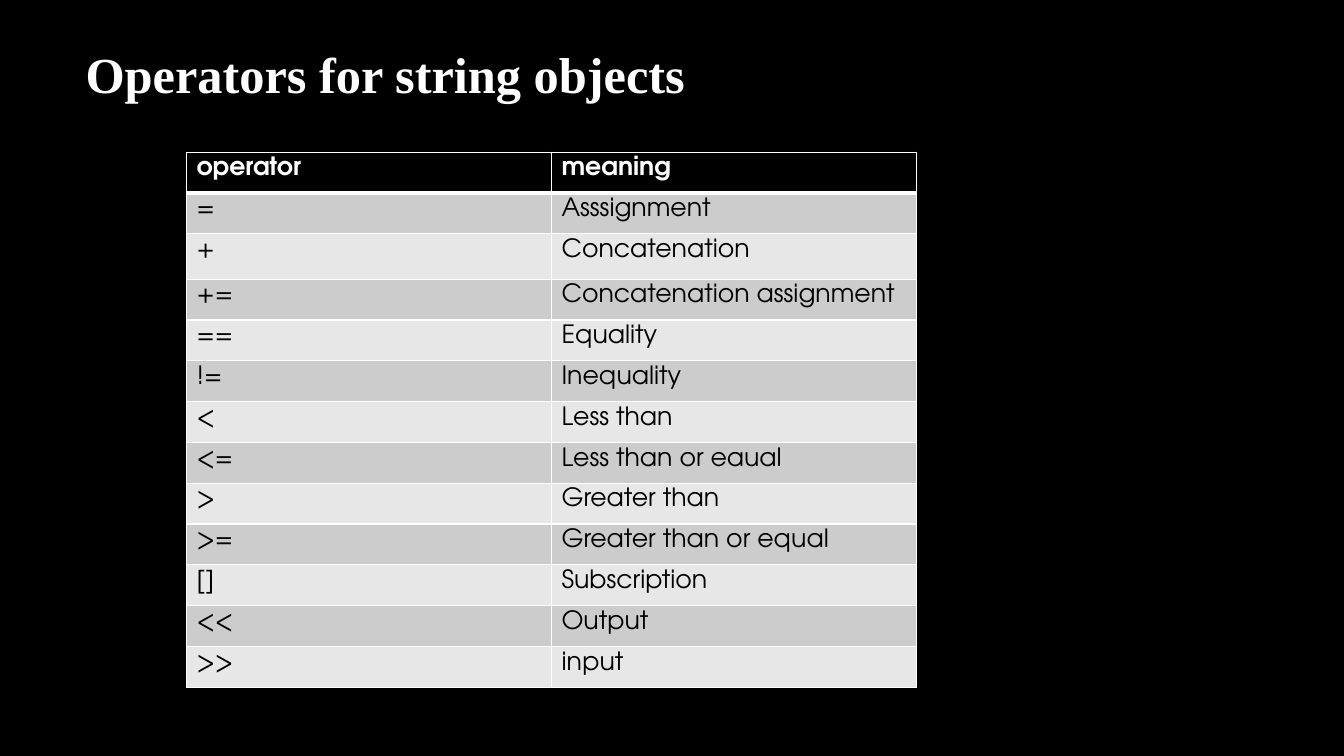
from lxml.etree import SubElement
from pptx import Presentation
from pptx.dml.color import RGBColor
from pptx.enum.text import MSO_ANCHOR
from pptx.oxml.ns import qn
from pptx.util import Inches, Pt

ROWS = [
    ("operator", "meaning"),
    ("=", "Asssignment"),
    ("+", "Concatenation"),
    ("+=", "Concatenation assignment"),
    ("==", "Equality"),
    ("!=", "Inequality"),
    ("<", "Less than"),
    ("<=", "Less than or eaual"),
    (">", "Greater than"),
    (">=", "Greater than or equal"),
    ("[]", "Subscription"),
    ("<<", "Output"),
    (">>", "input"),
]


def color(code):
    return RGBColor.from_string(code)


def style(para, face, size, code, bold):
    font = para.font
    font.name, font.size, font.bold = face, Pt(size), bold
    font.color.rgb = color(code)


def edge(cell, side, width):
    line = SubElement(cell._tc.get_or_add_tcPr(), qn("a:ln" + side), w=str(Pt(width)))
    fill = SubElement(line, qn("a:solidFill"))
    SubElement(fill, qn("a:srgbClr"), val="FFFFFF")


def title(slide, box, text):
    frame = slide.shapes.add_textbox(*map(Inches, box)).text_frame
    frame.word_wrap = True
    frame.vertical_anchor = MSO_ANCHOR.MIDDLE
    para = frame.paragraphs[0]
    para.text = text
    para.line_spacing = 0.9
    style(para, "Times New Roman", 36, "FFFFFF", True)


def grid(slide, box, rows):
    count = len(rows[0])
    table = slide.shapes.add_table(len(rows), count, *map(Inches, box)).table
    for col in table.columns:
        col.width = Inches(box[2] / count)
    for r, words in enumerate(rows):
        head = r == 0
        table.rows[r].height = Inches(0.45 if r == 2 else 0.405)
        for c, word in enumerate(words):
            cell = table.cell(r, c)
            for side in "LRTB":
                thick = (head and side == "B") or (r == 1 and side == "T")
                edge(cell, side, 3 if thick else 1)
            cell.fill.solid()
            shade = "000000" if head else "CCCCCC" if r % 2 else "E7E7E7"
            cell.fill.fore_color.rgb = color(shade)
            para = cell.text_frame.paragraphs[0]
            para.text = word
            ink = "FFFFFF" if head else "000000"
            style(para, "TeX Gyre Adventor", 18, ink, head)


def main():
    deck = Presentation()
    deck.slide_width, deck.slide_height = Inches(13.33), Inches(7.5)
    slide = deck.slides.add_slide(deck.slide_layouts[6])
    slide.background.fill.solid()
    slide.background.fill.fore_color.rgb = color("000000")
    title(slide, (0.75, 0.42, 11.83, 0.69), "Operators for string objects")
    grid(slide, (1.85, 1.51, 7.24, 5.31), ROWS)
    deck.save("out.pptx")


if __name__ == "__main__":
    main()
